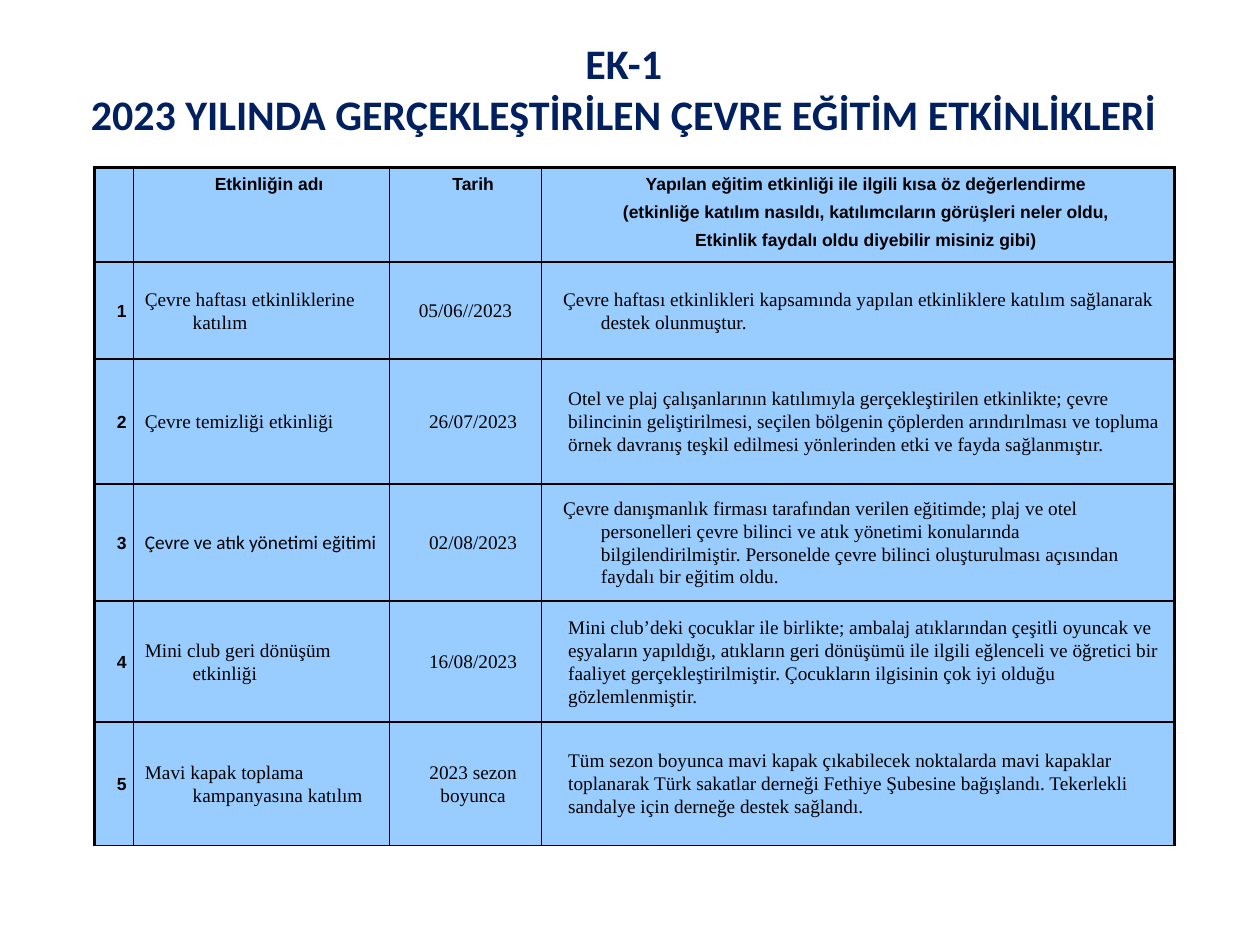
from lxml.etree import SubElement
from pptx import Presentation
from pptx.dml.color import RGBColor as RGB
from pptx.enum.text import MSO_ANCHOR as ANCHOR, PP_ALIGN as ALIGN
from pptx.oxml.ns import qn
from pptx.util import Inches, Pt

COLORS = {"title": "002060", "text": "000000", "fill": "99CCFF", "line": "000000"}
LATIN, SANS, SERIF = "Calibri", "Arial", "Times New Roman"
THIN, THICK = 1, 2.25

# Left margin and first-line indent, in inches
INSET, HANGING, SHORT_HANGING = (0.12, 0), (0.38, -0.38), (0.38, -0.3)

TITLE = ["EK-1", "2023 YILINDA GERÇEKLEŞTİRİLEN ÇEVRE EĞİTİM ETKİNLİKLERİ"]
HEADERS = [
    "",
    "Etkinliğin adı",
    "Tarih",
    "Yapılan eğitim etkinliği ile ilgili kısa öz değerlendirme\n"
    "(etkinliğe katılım nasıldı, katılımcıların görüşleri neler oldu,\n"
    "Etkinlik faydalı oldu diyebilir misiniz gibi)",
]
# Name, name font, date, date indent, evaluation, evaluation indent
ACTIVITIES = [
    ("Çevre haftası etkinliklerine katılım", SERIF, "05/06//2023", HANGING,
     "Çevre haftası etkinlikleri kapsamında yapılan etkinliklere katılım "
     "sağlanarak destek olunmuştur.", SHORT_HANGING),
    ("Çevre temizliği etkinliği", SERIF, "26/07/2023", INSET,
     "Otel ve plaj çalışanlarının katılımıyla gerçekleştirilen etkinlikte; çevre "
     "bilincinin geliştirilmesi, seçilen bölgenin çöplerden arındırılması ve topluma "
     "örnek davranış teşkil edilmesi yönlerinden etki ve fayda sağlanmıştır.", INSET),
    ("Çevre ve atık yönetimi eğitimi", LATIN, "02/08/2023", INSET,
     "Çevre danışmanlık firması tarafından verilen eğitimde; plaj ve otel "
     "personelleri çevre bilinci ve atık yönetimi konularında bilgilendirilmiştir. "
     "Personelde çevre bilinci oluşturulması açısından faydalı bir eğitim oldu.",
     SHORT_HANGING),
    ("Mini club geri dönüşüm etkinliği", SERIF, "16/08/2023", INSET,
     "Mini club’deki çocuklar ile birlikte; ambalaj atıklarından çeşitli oyuncak ve "
     "eşyaların yapıldığı, atıkların geri dönüşümü ile ilgili eğlenceli ve öğretici bir "
     "faaliyet gerçekleştirilmiştir. Çocukların ilgisinin çok iyi olduğu "
     "gözlemlenmiştir.", INSET),
    ("Mavi kapak toplama kampanyasına katılım", SERIF, "2023 sezon boyunca", INSET,
     "Tüm sezon boyunca mavi kapak çıkabilecek noktalarda mavi kapaklar toplanarak "
     "Türk sakatlar derneği Fethiye Şubesine bağışlandı. Tekerlekli sandalye için "
     "derneğe destek sağlandı.", INSET),
]


class Deck:
    """Style and current slide; lengths are units of a 100 x 75 grid."""

    def __init__(self):
        self.prs = Presentation()
        self.prs.slide_width, self.prs.slide_height = Inches(10), Inches(7.5)
        self.unit = self.prs.slide_width / 100
        self.s = self.prs.slides.add_slide(self.prs.slide_layouts[5])

    def grid(self, *lengths):
        return [round(n * self.unit) for n in lengths]

    def font(self, p, name, size, color, bold):
        for r in p.runs:
            f = r.font
            f.name, f.size, f.bold = name, Pt(size), bold
            f.color.rgb = RGB.from_string(COLORS[color])

    def title(self, lines, box):
        sp = self.s.shapes.title
        sp.left, sp.top, sp.width, sp.height = self.grid(*box)
        tf = sp.text_frame
        tf.text = "\n".join(lines)
        tf.word_wrap, tf.vertical_anchor = False, ANCHOR.TOP
        for p in tf.paragraphs:
            p.alignment = ALIGN.CENTER
            self.font(p, LATIN, 24, "title", True)

    def table(self, left, top, widths, heights):
        box = self.grid(left, top, sum(widths), sum(heights))
        table = self.s.shapes.add_table(len(heights), len(widths), *box).table
        table.first_row = table.horz_banding = False
        for column, width in zip(table.columns, self.grid(*widths)):
            column.width = width
        for row, height in zip(table.rows, self.grid(*heights)):
            row.height = height
        for i, row in enumerate(table.rows):
            for j, cell in enumerate(row.cells):
                self.borders(cell, {
                    "lnL": THIN if j else THICK,
                    "lnR": THICK if j == len(widths) - 1 else THIN,
                    "lnT": THIN if i else THICK,
                    "lnB": THIN,
                })
                cell.fill.solid()
                cell.fill.fore_color.rgb = RGB.from_string(COLORS["fill"])
                cell.margin_left = cell.margin_right = Inches(0.09)
                cell.margin_top = cell.margin_bottom = Inches(0.05)
        return table

    def borders(self, cell, widths):
        tc_pr = cell._tc.get_or_add_tcPr()
        for side, width in widths.items():
            ln = SubElement(tc_pr, qn(f"a:{side}"), w=str(Pt(width)))
            fill = SubElement(ln, qn("a:solidFill"))
            SubElement(fill, qn("a:srgbClr"), val=COLORS["line"])

    def cell(self, cell, text, font=SERIF, size=11, bold=False, align=ALIGN.LEFT,
             indent=INSET, anchor=ANCHOR.MIDDLE):
        cell.vertical_anchor = anchor
        tf = cell.text_frame
        tf.text = text
        for i, p in enumerate(tf.paragraphs):
            p.alignment, p.line_spacing = align, 1.07
            if i:
                p.space_before = Pt(4)
            p_pr = p._p.get_or_add_pPr()
            for key, value in zip(("marL", "indent"), indent):
                p_pr.set(key, str(Inches(value)))
            self.font(p, font, size, "text", bold)


def main():
    deck = Deck()
    deck.title(TITLE, (5.8, 2.5, 87.4, 9.1))
    table = deck.table(7.5, 13.3, (3.1, 20.3, 12.1, 50.2),
                       (7.5, 7.7, 9.9, 9.3, 9.6, 9.8))
    label = dict(font=SANS, size=10, bold=True, align=ALIGN.CENTER)
    for j, text in enumerate(HEADERS):
        if text:
            deck.cell(table.cell(0, j), text, anchor=ANCHOR.TOP, **label)
    for i, activity in enumerate(ACTIVITIES, 1):
        name, name_font, date, date_indent, evaluation, evaluation_indent = activity
        deck.cell(table.cell(i, 0), str(i), **label)
        deck.cell(table.cell(i, 1), name, font=name_font, indent=HANGING)
        deck.cell(table.cell(i, 2), date, align=ALIGN.CENTER, indent=date_indent)
        deck.cell(table.cell(i, 3), evaluation, indent=evaluation_indent)
    deck.prs.save("out.pptx")


if __name__ == "__main__":
    main()
